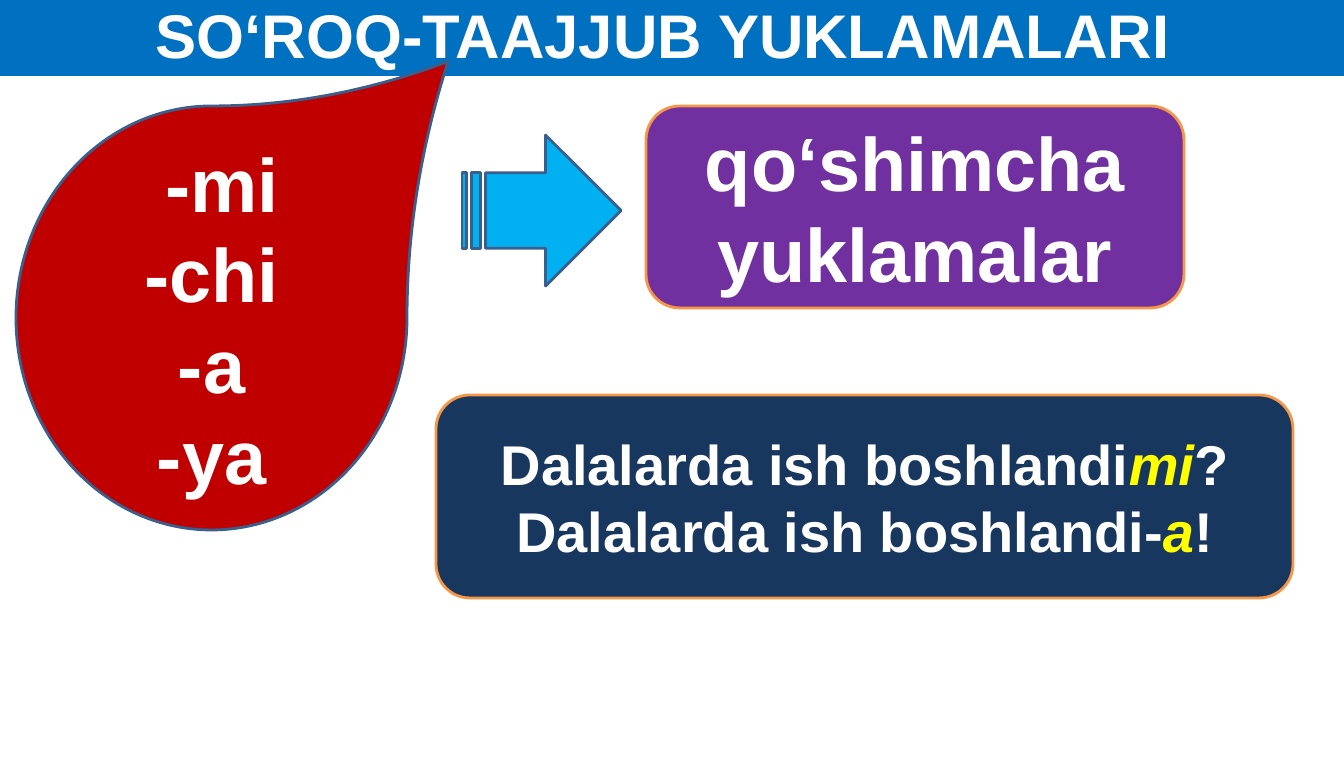
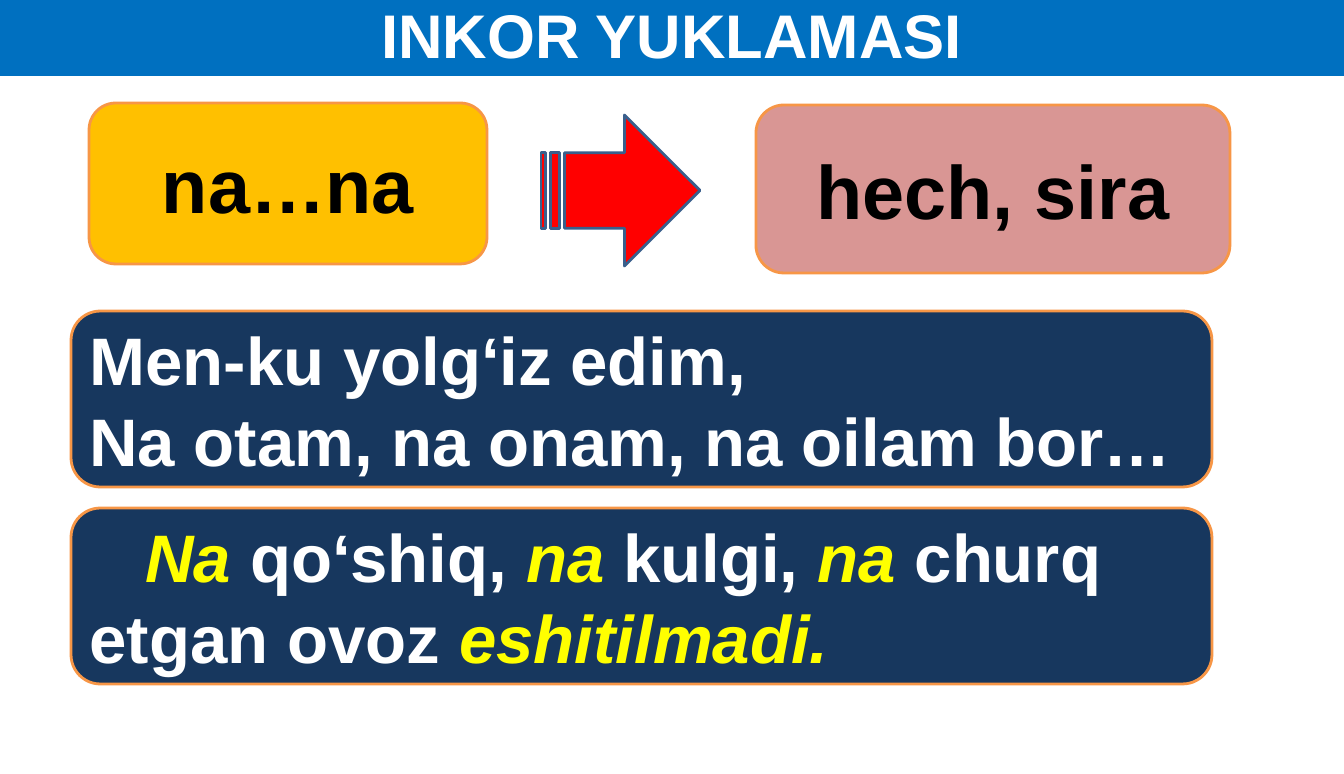
from pptx import Presentation, util as u
from pptx.dml.color import RGBColor
from pptx.enum import shapes, text

PX = 12192000 / 1344
SLIDE_WIDTH, SLIDE_HEIGHT = 1344, 774
FONT = "Arial"
COLORS = {
    "band": "0070C0", "white": "FFFFFF", "black": "000000", "highlight": "FFFF00",
    "outline": "3A5F8C", "border": "F79646", "navy": "17375E", "purple": "7030A0",
    "crimson": "C00000", "sky": "00B0F0", "red": "FF0000", "amber": "FFC000",
    "rose": "D99694",
}
SHAPE = shapes.MSO_SHAPE
CENTER, LEFT = text.PP_ALIGN.CENTER, text.PP_ALIGN.LEFT


def px(length):
    return u.Emu(round(length * PX))


def color(name):
    return RGBColor.from_string(COLORS[name])


def write(shape, lines, size, font_color="white", align=CENTER):
    """Fill a shape with paragraphs; parts between asterisks are highlighted."""
    frame = shape.text_frame
    frame.word_wrap = True
    frame.auto_size = text.MSO_AUTO_SIZE.NONE
    frame.vertical_anchor = text.MSO_ANCHOR.MIDDLE
    for index, line in enumerate(lines):
        paragraph = frame.add_paragraph() if index else frame.paragraphs[0]
        paragraph.alignment = align
        for position, part in enumerate(line.split("*")):
            if not part:
                continue
            run = paragraph.add_run()
            run.text = part
            highlighted = position % 2 == 1
            font = run.font
            font.name, font.size, font.bold = FONT, u.Pt(size), True
            font.italic = highlighted
            font.color.rgb = color("highlight" if highlighted else font_color)


def add_figure(slide, kind, box, fill, line):
    shape = slide.shapes.add_shape(kind, *map(px, box))
    shape.shadow.inherit = False
    shape.fill.solid()
    shape.fill.fore_color.rgb = color(fill)
    shape.line.color.rgb = color(line)
    shape.line.width = u.Pt(2)
    return shape


def add_card(slide, box, fill, lines, size=54, font_color="white", align=CENTER):
    card = add_figure(slide, SHAPE.ROUNDED_RECTANGLE, box, fill, "border")
    write(card, lines, size, font_color, align)
    return card


def add_arrow(slide, left, top, fill):
    add_figure(slide, SHAPE.STRIPED_RIGHT_ARROW, (left, top, 159, 151), fill, "outline")


def add_drop(slide, box, lines):
    drop = add_figure(slide, SHAPE.TEAR, box, "crimson", "outline")
    drop.adjustments[0] = 1.21
    write(drop, lines, 54)


def add_titled_slide(presentation, heading):
    slide = presentation.slides.add_slide(presentation.slide_layouts[5])
    title = slide.shapes.title
    title.left, title.top, title.width, title.height = map(px, (0, -9, SLIDE_WIDTH, 85))
    title.fill.solid()
    title.fill.fore_color.rgb = color("band")
    write(title, [heading], 44)
    return slide


def build_question_slide(presentation):
    slide = add_titled_slide(presentation, "SO‘ROQ-TAAJJUB YUKLAMALARI ")
    add_arrow(slide, 462, 135, "sky")
    add_card(slide, (646, 106, 538, 202), "purple", ["qo‘shimcha", "yuklamalar"])
    add_drop(slide, (16, 106, 391, 424), [" -mi", "-chi", "-a", "-ya"])
    add_card(slide, (436, 395, 857, 203), "navy",
             ["Dalalarda ish boshlandi*mi*?", "Dalalarda ish boshlandi-*a*!"], 40)


def build_negation_slide(presentation):
    slide = add_titled_slide(presentation, "INKOR YUKLAMASI")
    add_card(slide, (89, 103, 398, 161), "amber", ["na…na"], font_color="black")
    add_arrow(slide, 541, 115, "red")
    add_card(slide, (756, 105, 474, 168), "rose", ["hech, sira"], font_color="black")

    examples = [
        ["Men-ku yolg‘iz edim,", "Na otam, na onam, na oilam bor…"],
        ["*Na *qo‘shiq, *na *kulgi, *na *churq etgan ovoz *eshitilmadi.*"],
    ]
    for row, lines in enumerate(examples):
        card = add_card(slide, (71, 311 + row * 197, 1141, 176), "navy", lines, 48, align=LEFT)
    first_paragraph = card.text_frame.paragraphs[0]
    first_paragraph._p.get_or_add_pPr().set("indent", str(px(56)))


def main():
    presentation = Presentation()
    presentation.slide_width = px(SLIDE_WIDTH)
    presentation.slide_height = px(SLIDE_HEIGHT)
    build_question_slide(presentation)
    build_negation_slide(presentation)
    presentation.save("out.pptx")


if __name__ == "__main__":
    main()
